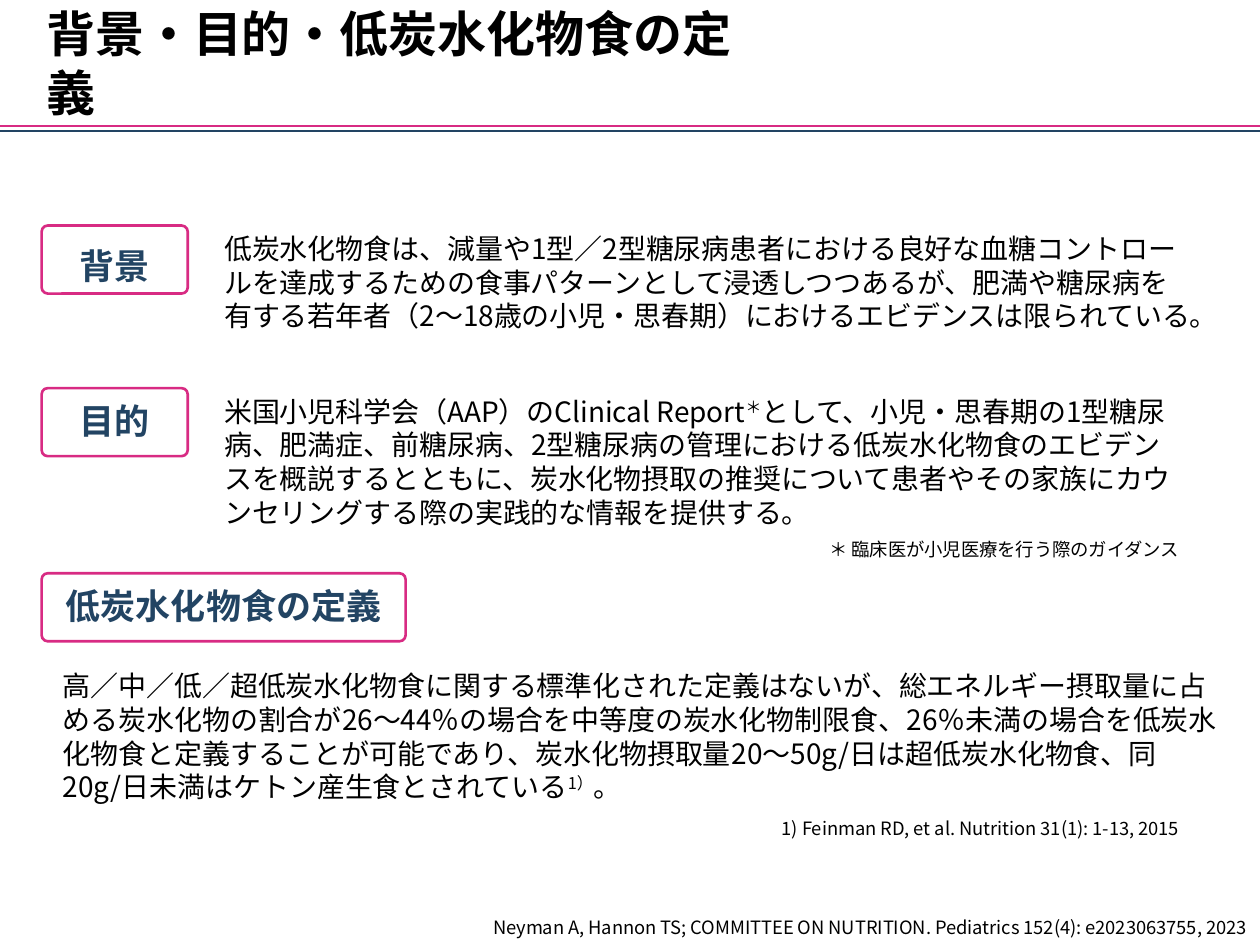
from pptx import Presentation
from pptx.dml.color import RGBColor
from pptx.enum.shapes import MSO_CONNECTOR, MSO_SHAPE
from pptx.enum.text import MSO_ANCHOR as ANCHOR, MSO_AUTO_SIZE as FIT, PP_ALIGN as ALIGN
from pptx.oxml.ns import qn
from pptx.util import Pt
from lxml import etree

NAVY, PINK, BLACK = "224463", "D82B83", "000000"


def color(hex_text):
    return RGBColor.from_string(hex_text)


class Page:
    font = "Noto Sans CJK JP"
    line_width = 1.5

    def __init__(self, slide):
        self.s = slide

    def rule(self, y, width, line):
        c = self.s.shapes.add_connector(MSO_CONNECTOR.STRAIGHT, 0, Pt(y), Pt(width), Pt(y))
        c.line.color.rgb = color(line)
        c.line.width = Pt(self.line_width)
        etree.SubElement(c._element.spPr, qn("a:effectLst"))

    def run(self, p, text, size, fill, bold, raised=False):
        r = p.add_run()
        r.text = text
        f = r.font
        f.name, f.size, f.bold = self.font, Pt(size), bold
        f.color.rgb = color(fill)
        r_pr = r._r.get_or_add_rPr()
        etree.SubElement(r_pr, qn("a:ea"), typeface=self.font)
        if raised:
            r_pr.set("baseline", "30000")

    def text(self, x, y, w, h, content, size=16, fill=BLACK, bold=False,
             align=ALIGN.LEFT, anchor=ANCHOR.TOP, spacing=None):
        """Add a text box; every second part of content split at ^ is superscript."""
        tf = self.s.shapes.add_textbox(Pt(x), Pt(y), Pt(w), Pt(h)).text_frame
        tf.word_wrap = True
        tf.auto_size = FIT.SHAPE_TO_FIT_TEXT
        tf.vertical_anchor = anchor
        p = tf.paragraphs[0]
        p.alignment = align
        if spacing:
            p.line_spacing = spacing
        for i, part in enumerate(content.split("^")):
            self.run(p, part, size, fill, bold, raised=i % 2 == 1)

    def note(self, right, y, content):
        left = 93.6
        self.text(left, y, right - left, 20, content, size=10.5,
                  align=ALIGN.RIGHT, anchor=ANCHOR.BOTTOM)

    def label(self, y, w, content, text_dy=5.8, spacing=0.9):
        """Add a pink rounded frame with a centred navy heading."""
        x, h = 23.8, 38.9
        sp = self.s.shapes.add_shape(MSO_SHAPE.ROUNDED_RECTANGLE, Pt(x), Pt(y), Pt(w), Pt(h))
        sp.adjustments[0] = 0.09
        sp.shadow.inherit = False
        sp.fill.background()
        sp.line.color.rgb = color(PINK)
        sp.line.width = Pt(self.line_width)
        self.text(x, y + text_dy, w, 29, content, size=20, fill=NAVY, bold=True,
                  align=ALIGN.CENTER, spacing=spacing)


def main():
    prs = Presentation()
    prs.slide_width, prs.slide_height = Pt(720), Pt(540)
    page = Page(prs.slides.add_slide(prs.slide_layouts[6]))

    page.rule(74.9, 720, NAVY)
    page.rule(72, 720, PINK)
    page.text(19.4, 15.1, 410, 41, "背景・目的・低炭水化物食の定義", size=28, bold=True,
              anchor=ANCHOR.MIDDLE)

    page.label(128.9, 83.5, "背景", text_dy=2.2, spacing=1.2)
    page.text(121, 128.9, 568, 65.5,
              "低炭水化物食は、減量や1型／2型糖尿病患者における良好な血糖コントロールを達成するための"
              "食事パターンとして浸透しつつあるが、肥満や糖尿病を有する若年者（2～18歳の小児・思春期）に"
              "おけるエビデンスは限られている。")

    page.label(221.8, 83.5, "目的")
    page.text(121, 221.8, 560, 85,
              "米国小児科学会（AAP）のClinical Report^＊^として、小児・思春期の1型糖尿病、肥満症、"
              "前糖尿病、2型糖尿病の管理における低炭水化物食のエビデンスを概説するとともに、"
              "炭水化物摂取の推奨について患者やその家族にカウンセリングする際の実践的な情報を提供する。")
    page.note(681.1, 303.8, "＊ 臨床医が小児医療を行う際のガイダンス")

    page.label(327.6, 208, "低炭水化物食の定義")
    page.text(28.8, 378.7, 674.6, 85,
              "高／中／低／超低炭水化物食に関する標準化された定義はないが、総エネルギー摂取量に占める"
              "炭水化物の割合が26～44％の場合を中等度の炭水化物制限食、26％未満の場合を低炭水化物食と"
              "定義することが可能であり、炭水化物摂取量20～50g/日は超低炭水化物食、"
              "同20g/日未満はケトン産生食とされている^1）^。")
    page.note(681.1, 463, "1) Feinman RD, et al. Nutrition 31(1): 1-13, 2015")
    page.note(720, 519.8,
              "Neyman A, Hannon TS; COMMITTEE ON NUTRITION. Pediatrics 152(4): e2023063755, 2023")

    prs.save("out.pptx")


if __name__ == "__main__":
    main()
